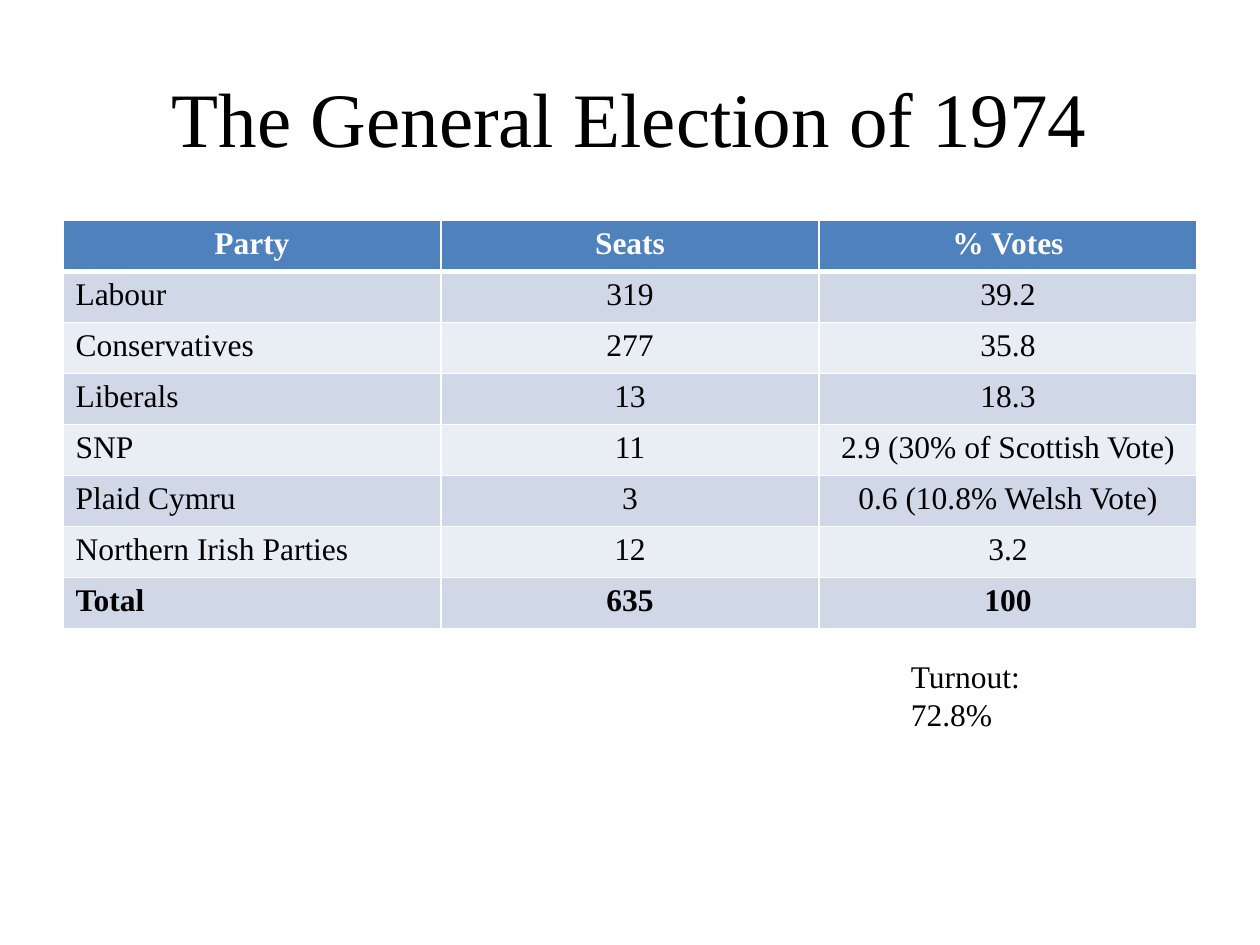
from lxml import etree
from pptx import Presentation
from pptx.dml.color import RGBColor
from pptx.enum.text import MSO_ANCHOR, PP_ALIGN
from pptx.oxml.ns import qn
from pptx.util import Pt

LEFT, CENTER = PP_ALIGN.LEFT, PP_ALIGN.CENTER
TOP, MIDDLE = MSO_ANCHOR.TOP, MSO_ANCHOR.MIDDLE
FONT = "Times New Roman"
COLORS = {
    "text": "000000",
    "white": "FFFFFF",
    "header": "4F81BD",
    "odd_row": "D0D8E8",
    "even_row": "E9EDF4",
}
RESULTS = [
    ("Party", "Seats", "% Votes"),
    ("Labour", "319", "39.2"),
    ("Conservatives", "277", "35.8"),
    ("Liberals", "13", "18.3"),
    ("SNP", "11", "2.9 (30% of Scottish Vote)"),
    ("Plaid Cymru", "3", "0.6 (10.8% Welsh Vote)"),
    ("Northern Irish Parties", "12", "3.2"),
    ("Total", "635", "100"),
]
COLUMN_WIDTH, ROW_HEIGHT = 216, 29.16


def write(frame, text, size=18, color="text", bold=False, align=LEFT):
    para = frame.paragraphs[0]
    para.alignment = align
    span = para.add_run()
    span.text = text
    span.font.name = FONT
    span.font.size = Pt(size)
    span.font.bold = bold
    span.font.color.rgb = RGBColor.from_string(COLORS[color])


def add_border(cell, side, width):
    """Draw a white line on one side of a cell: L, R, T or B."""
    line = etree.SubElement(cell._tc.get_or_add_tcPr(), qn(f"a:ln{side}"), w=str(Pt(width)))
    fill = etree.SubElement(line, qn("a:solidFill"))
    etree.SubElement(fill, qn("a:srgbClr"), val=COLORS["white"])


deck = Presentation()
deck.slide_width, deck.slide_height = Pt(720), Pt(540)
page = deck.slides.add_slide(deck.slide_layouts[6])

# Title and turnout note
for text, place, anchor, size, align in [
    ("The General Election of 1974", (36, 21.6, 648, 90), MIDDLE, 44, CENTER),
    ("Turnout: 72.8%", (513.4, 372.2, 122, 50.8), TOP, 18, LEFT),
]:
    box = page.shapes.add_textbox(*map(Pt, place))
    box.text_frame.word_wrap = True
    box.text_frame.vertical_anchor = anchor
    write(box.text_frame, text, size=size, align=align)

# Results table
row_count, column_count = len(RESULTS), len(RESULTS[0])
table = page.shapes.add_table(
    row_count, column_count, Pt(36), Pt(126),
    Pt(COLUMN_WIDTH * column_count), Pt(ROW_HEIGHT * row_count),
).table
for column in table.columns:
    column.width = Pt(COLUMN_WIDTH)

for r, values in enumerate(RESULTS):
    table.rows[r].height = Pt(ROW_HEIGHT)
    is_header = r == 0
    row_color = "header" if is_header else "odd_row" if r % 2 else "even_row"
    for c, value in enumerate(values):
        cell = table.cell(r, c)
        write(
            cell.text_frame, value,
            color="white" if is_header else "text",
            bold=is_header or value in RESULTS[-1],
            align=CENTER if is_header or c else LEFT,
        )
        borders = {"L": 1, "R": 1, "T": 3 if r == 1 else 1, "B": 3 if is_header else 1}
        for side, width in borders.items():
            add_border(cell, side, width)
        cell.fill.solid()
        cell.fill.fore_color.rgb = RGBColor.from_string(COLORS[row_color])

deck.save("out.pptx")
